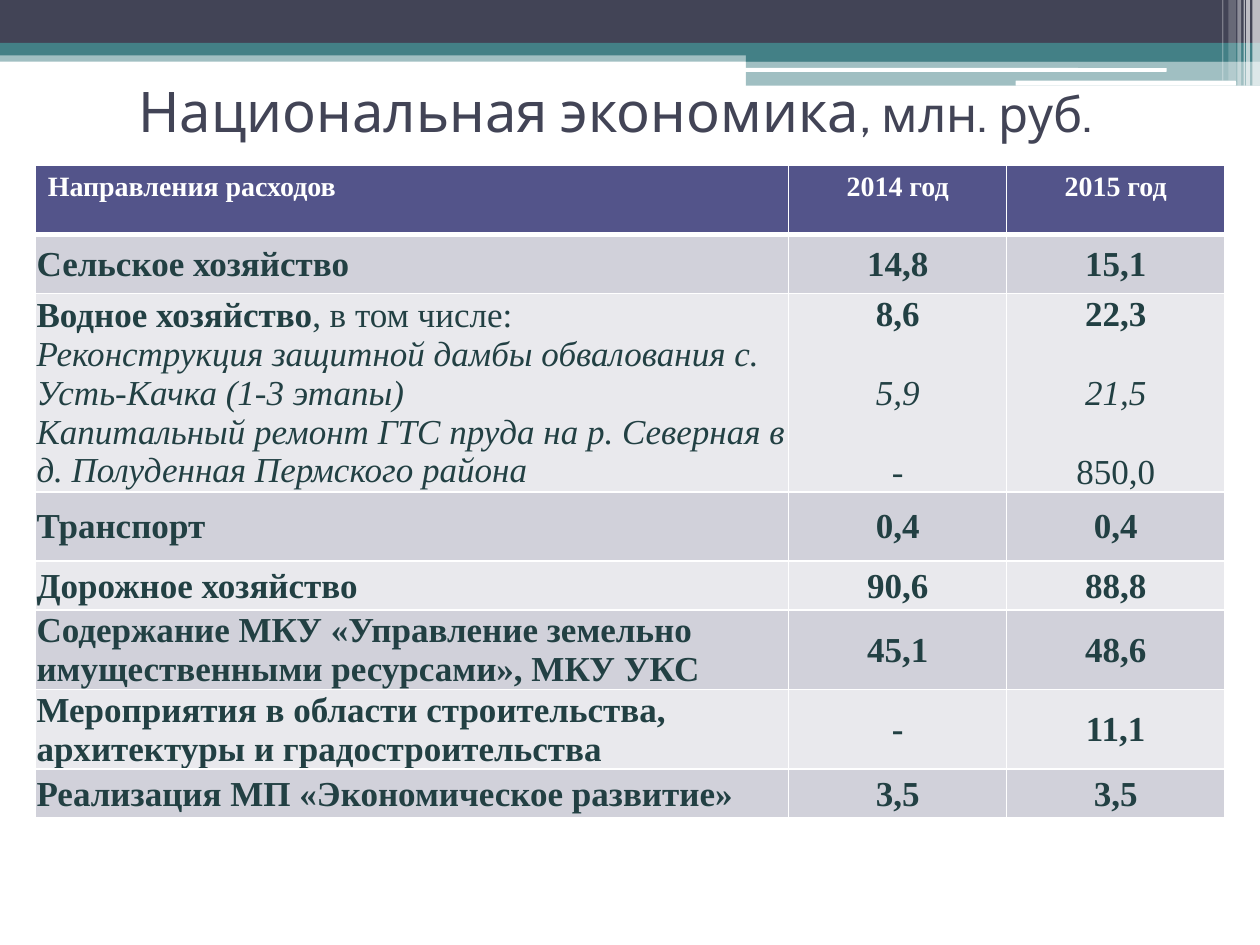
from lxml import etree
from pptx import Presentation, util as u
from pptx.dml.color import RGBColor
from pptx.enum import shapes, text
from pptx.oxml.ns import qn

WHITE = RGBColor(0xFF, 0xFF, 0xFF)
NAVY = RGBColor(0x42, 0x44, 0x56)
TEAL = RGBColor(0x43, 0x80, 0x86)
INDIGO = RGBColor(0x53, 0x54, 0x8A)
INK = RGBColor(0x22, 0x40, 0x43)
BANDS = RGBColor(0xD1, 0xD1, 0xDA), RGBColor(0xE9, 0xE9, 0xED)
TITLE_FONT, TABLE_FONT = "Cabin", "Times New Roman"

TITLE = [("Национальная экономика", 32), (", млн. руб.", 28)]
HEADER = ["Направления расходов", "2014 год", "2015 год"]
# A cell is a string, or a list of paragraphs: (lines skipped above, [(text, style)])
ROWS = [
    ["Сельское хозяйство", "14,8", "15,1"],
    [[(0, [("Водное хозяйство", "b"), (", в том числе:", "")]),
      (0, [("Реконструкция защитной дамбы обвалования с. Усть-Качка (1-3 этапы)", "i")]),
      (0, [("Капитальный ремонт ГТС пруда на р. Северная в д. Полуденная Пермского района", "i")])],
     [(0, [("8,6", "b")]), (1, [("5,9", "i")]), (1, [("-", "")])],
     [(0, [("22,3", "b")]), (1, [("21,5", "i")]), (1, [("850,0", "")])]],
    ["Транспорт", "0,4", "0,4"],
    ["Дорожное хозяйство", "90,6", "88,8"],
    ["Содержание МКУ «Управление земельно имущественными ресурсами», МКУ УКС", "45,1", "48,6"],
    ["Мероприятия в области строительства, архитектуры и градостроительства", "-", "11,1"],
    ["Реализация МП «Экономическое развитие»", "3,5", "3,5"],
]
COL_WIDTHS = [5.98, 1.73, 1.73]
ROW_HEIGHTS = [0.55, 0.47, 1.55, 0.55, 0.39, 0.63, 0.63, 0.39]
LINE_PT = 23  # height of one 20 pt line

# left, top, width, height, colour, opacity %
BARS = [
    (0, 0.4, 10, 0.09, TEAL, 50),
    (0, 0, 10, 0.34, NAVY, 100),
    (0, 0.34, 10, 0.1, TEAL, 100),
    (5.92, 0.39, 4.08, 0.1, TEAL, 100),
    (5.92, 0.48, 4.08, 0.2, TEAL, 50),
]
ROUND_BARS = [(5.91, 0.54, 3.35, 0.03, WHITE, 100), (8.06, 0.64, 1.75, 0.04, WHITE, 100)]
# left, width, height, opacity %
STRIPES = [(9.94, 0.06, 0.68, 65), (9.89, 0.03, 0.68, 65), (9.87, 0.01, 0.68, 60),
           (9.82, 0.03, 0.68, 40), (9.75, 0.06, 0.64, 20), (9.7, 0.01, 0.64, 30)]


def add_bar(s, x, y, w, h, color, opacity, kind=shapes.MSO_SHAPE.RECTANGLE):
    sp = s.shapes.add_shape(kind, *map(u.Inches, (x, y, w, h)))
    sp.shadow.inherit = False
    sp.line.fill.background()
    sp.fill.solid()
    sp.fill.fore_color.rgb = color
    if opacity < 100:
        clr = sp.fill._xPr.find(qn("a:solidFill"))[0]
        etree.SubElement(clr, qn("a:alpha"), val=str(opacity * 1000))


def add_text(p, content, size, color, font=TABLE_FONT, style=""):
    r = p.add_run()
    r.text = content
    f = r.font
    f.size, f.name, f.color.rgb = u.Pt(size), font, color
    f.bold, f.italic = "b" in style, "i" in style


def set_borders(cell, bottom):
    pr = cell._tc.get_or_add_tcPr()
    for side, width in zip("LRTB", (1, 1, 1, bottom)):
        ln = etree.SubElement(pr, qn("a:ln" + side), w=str(u.Pt(width)))
        fill = etree.SubElement(ln, qn("a:solidFill"))
        etree.SubElement(fill, qn("a:srgbClr"), val=str(WHITE))


def fill_cell(cell, content, col, color, size, ink, bottom=1):
    set_borders(cell, bottom)
    cell.fill.solid()
    cell.fill.fore_color.rgb = color
    if isinstance(content, str):
        content = [(0, [(content, "b")])]
    tf = cell.text_frame
    for i, (skipped, runs) in enumerate(content):
        p = tf.add_paragraph() if i else tf.paragraphs[0]
        p.alignment = text.PP_ALIGN.CENTER if col else text.PP_ALIGN.LEFT
        if skipped:
            p.space_before = u.Pt(skipped * LINE_PT)
        for content_run, style in runs:
            add_text(p, content_run, size, ink, style=style)


def add_budget_table(s):
    tbl = s.shapes.add_table(len(ROW_HEIGHTS), len(COL_WIDTHS), u.Inches(0.28), u.Inches(1.31),
                             u.Inches(sum(COL_WIDTHS)), u.Inches(sum(ROW_HEIGHTS))).table
    for column, width in zip(tbl.columns, COL_WIDTHS):
        column.width = u.Inches(width)
    for row, height in zip(tbl.rows, ROW_HEIGHTS):
        row.height = u.Inches(height)
    for c, heading in enumerate(HEADER):
        fill_cell(tbl.cell(0, c), heading, c, INDIGO, 16, WHITE, bottom=3)
    for r, row in enumerate(ROWS, 1):
        for c, content in enumerate(row):
            cell = tbl.cell(r, c)
            cell.margin_left = cell.margin_right = cell.margin_top = u.Inches(0.01)
            cell.margin_bottom = 0
            cell.vertical_anchor = text.MSO_ANCHOR.MIDDLE
            fill_cell(cell, content, c, BANDS[(r - 1) % 2], 20, INK)


def main():
    prs = Presentation()
    prs.slide_width, prs.slide_height = u.Inches(10), u.Inches(7.5)
    s = prs.slides.add_slide(prs.slide_layouts[5])
    for bar in BARS:
        add_bar(s, *bar)
    for bar in ROUND_BARS:
        add_bar(s, *bar, kind=shapes.MSO_SHAPE.ROUNDED_RECTANGLE)
    for x, w, h, opacity in STRIPES:
        add_bar(s, x, 0, w, h, WHITE, opacity)

    title = s.shapes.title
    title.left, title.top, title.width, title.height = map(u.Inches, (0.2, 0.44, 9.37, 0.87))
    tf = title.text_frame
    tf.vertical_anchor = text.MSO_ANCHOR.MIDDLE
    tf.paragraphs[0].alignment = text.PP_ALIGN.CENTER
    for content, size in TITLE:
        add_text(tf.paragraphs[0], content, size, NAVY, TITLE_FONT)

    add_budget_table(s)
    prs.save("out.pptx")


if __name__ == "__main__":
    main()
